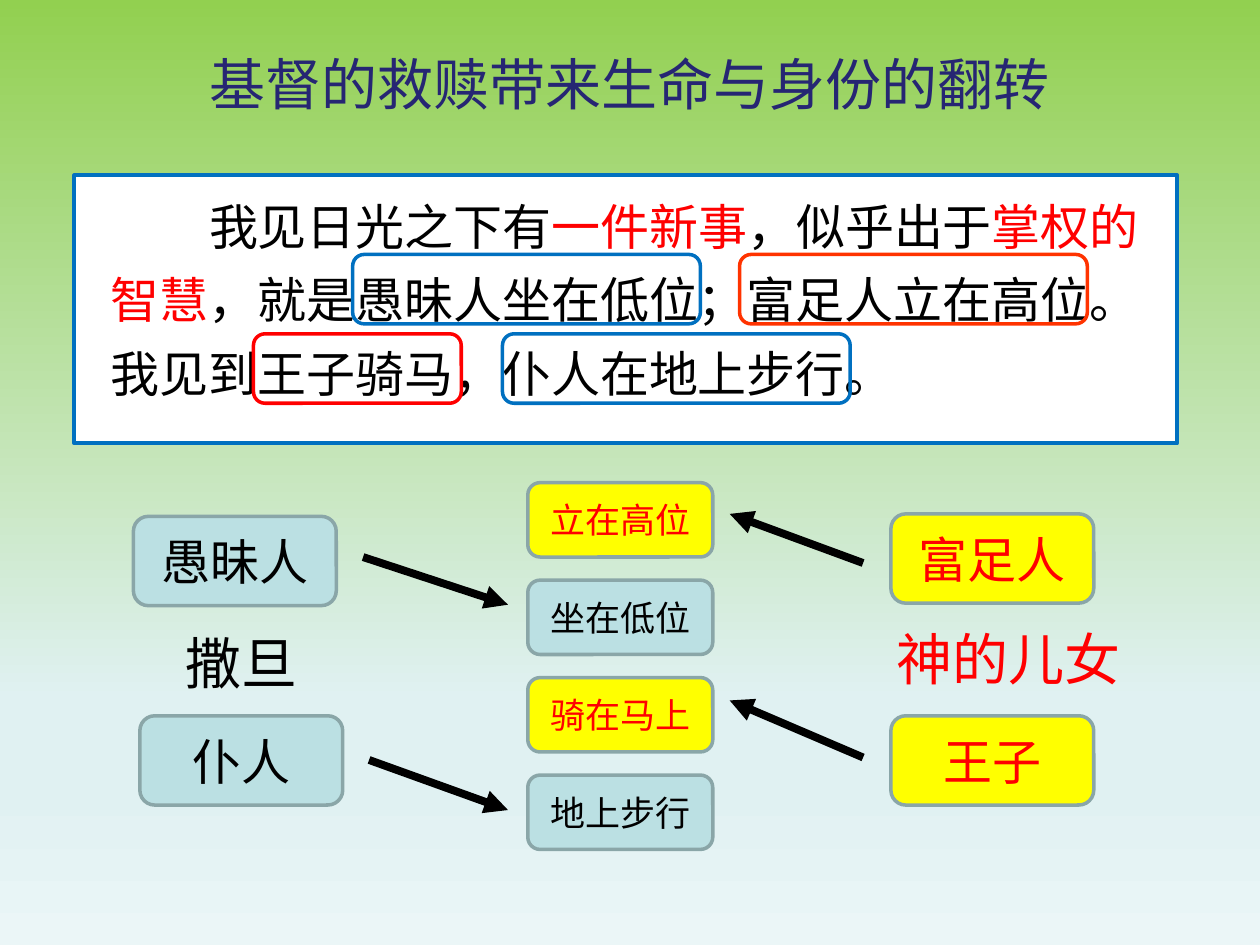
"""Build a slide on the reversal of life and status."""
from typing import NamedTuple

from lxml import etree
from pptx import Presentation
from pptx import util as u
from pptx.dml.color import RGBColor
from pptx.enum import shapes, text
from pptx.oxml.ns import qn

COLORS = {
    "black": "000000", "red": "FF0000", "orange": "FF3300", "blue": "0070C0",
    "navy": "262673", "white": "FFFFFF", "yellow": "FFFF00",
    "aqua": "BBE0E3", "gray": "8AA6A8",
}
BACKGROUND = [(0, "92D050"), (74, "E0F1F2"), (83, "E0F1F2"), (100, "EBF6F7")]
SANS = "Noto Sans CJK SC"


class Box(NamedTuple):
    left: float
    top: float
    width: float
    height: float


class Card(NamedTuple):
    words: str
    box: Box
    size: int
    raised: bool


class Highlight(NamedTuple):
    box: Box
    color: str


class Label(NamedTuple):
    words: str
    box: Box
    color: str


class Arrow(NamedTuple):
    x1: float
    y1: float
    x2: float
    y2: float


VERSE = [
    ("我见日光之下有", "black"), ("一件新事", "red"), ("，似乎出于", "black"),
    ("掌权的智慧", "red"),
    ("，就是愚昧人坐在低位；富足人立在高位。我见到王子骑马，仆人在地上步行。", "black"),
]
HIGHLIGHTS = [
    Highlight(Box(7.11, 5.13, 7.01, 1.4), "blue"),
    Highlight(Box(14.91, 5.13, 7.01, 1.4), "orange"),
    Highlight(Box(5.11, 6.73, 4.19, 1.4), "red"),
    Highlight(Box(10.13, 6.73, 7.01, 1.4), "blue"),
]
PEOPLE = [
    Card(words, Box(left, top, 4.09, 1.8), 28, raised)
    for words, left, top, raised in [
        ("愚昧人", 2.69, 10.41, False), ("富足人", 17.96, 10.36, True),
        ("仆人", 2.82, 14.43, False), ("王子", 17.96, 14.43, True)]
]
POSITIONS = [
    Card(words, Box(10.64, 9.73 + row * 1.965, 3.73, 1.5), 20, row % 2 == 0)
    for row, words in enumerate(["立在高位", "坐在低位", "骑在马上", "地上步行"])
]
ARROWS = [
    Arrow(7.32, 11.23, 10.24, 12.19), Arrow(7.44, 15.32, 10.24, 16.33),
    Arrow(17.4, 11.35, 14.71, 10.36), Arrow(17.4, 15.27, 14.71, 14.12),
]
LABELS = [
    Label("撒旦", Box(2.82, 12.55, 4.09, 1.63), "black"),
    Label("神的儿女", Box(17.32, 12.47, 6.02, 1.63), "red"),
]


def rgb(name: str) -> RGBColor:
    return RGBColor.from_string(COLORS[name])


def lengths(values) -> list:
    return [u.Cm(value) for value in values]


def write(paragraph, words: str, *, size: int, color: str, font: str = SANS,
          align=text.PP_ALIGN.CENTER) -> None:
    paragraph.alignment = align
    run = paragraph.add_run()
    run.text = words
    run.font.size = u.Pt(size)
    run.font.color.rgb = rgb(color)
    run.font.name = font
    etree.SubElement(run.font._element, qn("a:ea"), typeface=font)


def outline(shape, color: str, width: float) -> None:
    shape.line.color.rgb = rgb(color)
    shape.line.width = u.Pt(width)


def place(shape, box: Box) -> None:
    shape.left, shape.top, shape.width, shape.height = lengths(box)


def paint_background(slide) -> None:
    fill = slide.background.fill
    fill.gradient()
    fill.gradient_angle = 270
    stops = next(slide._element.iter(qn("a:gsLst")))
    for stop in list(stops):
        stops.remove(stop)
    for percent, color in BACKGROUND:
        stop = etree.SubElement(stops, qn("a:gs"), pos=str(percent * 1000))
        etree.SubElement(stop, qn("a:srgbClr"), val=color)


def fill_title(title) -> None:
    place(title, Box(1.27, 0.43, 22.86, 2.51))
    title.text_frame.auto_size = text.MSO_AUTO_SIZE.NONE
    title.text_frame.vertical_anchor = text.MSO_ANCHOR.MIDDLE
    write(title.text_frame.paragraphs[0], "基督的救赎带来生命与身份的翻转",
          size=32, color="navy", font="Arial")


def fill_verse(body) -> None:
    place(body, Box(1.5, 3.53, 22.23, 5.41))
    body.fill.solid()
    body.fill.fore_color.rgb = rgb("white")
    outline(body, "blue", 2.25)
    body.text_frame.auto_size = text.MSO_AUTO_SIZE.NONE
    paragraph = body.text_frame.paragraphs[0]
    paragraph.line_spacing = u.Pt(42)
    paragraph.space_before = u.Pt(5.6)
    for words, color in VERSE:
        write(paragraph, words, size=28, color=color, align=text.PP_ALIGN.LEFT)
    properties = paragraph._p.get_or_add_pPr()
    properties.set("marL", str(u.Cm(0.48)))
    properties.set("indent", str(u.Cm(1.98)))
    etree.SubElement(properties, qn("a:buNone"))


def add_rounded(slide, box: Box, line: str):
    shape = slide.shapes.add_shape(
        shapes.MSO_SHAPE.ROUNDED_RECTANGLE, *lengths(box))
    shape.shadow.inherit = False
    shape.fill.background()
    outline(shape, line, 2)
    return shape


def add_card(slide, card: Card) -> None:
    shape = add_rounded(slide, card.box, "gray")
    shape.fill.solid()
    shape.fill.fore_color.rgb = rgb("yellow" if card.raised else "aqua")
    shape.text_frame.vertical_anchor = text.MSO_ANCHOR.MIDDLE
    write(shape.text_frame.paragraphs[0], card.words, size=card.size,
          color="red" if card.raised else "black")


def add_arrow(slide, arrow: Arrow) -> None:
    connector = slide.shapes.add_connector(
        shapes.MSO_CONNECTOR.STRAIGHT, *lengths(arrow))
    outline(connector, "black", 4.5)
    etree.SubElement(connector.line._get_or_add_ln(), qn("a:tailEnd"),
                     type="triangle")
    etree.SubElement(connector._element.spPr, qn("a:effectLst"))


def add_label(slide, label: Label) -> None:
    frame = slide.shapes.add_textbox(*lengths(label.box)).text_frame
    frame.word_wrap = True
    frame.auto_size = text.MSO_AUTO_SIZE.SHAPE_TO_FIT_TEXT
    write(frame.paragraphs[0], label.words, size=32, color=label.color,
          font="Noto Sans CJK JP")


def main() -> None:
    deck = Presentation()
    deck.slide_width, deck.slide_height = lengths((25.4, 19.05))
    slide = deck.slides.add_slide(deck.slide_layouts[1])
    paint_background(slide)
    fill_title(slide.shapes.title)
    fill_verse(slide.placeholders[1])
    for highlight in HIGHLIGHTS:
        add_rounded(slide, highlight.box, highlight.color)
    for card in PEOPLE + POSITIONS:
        add_card(slide, card)
    for arrow in ARROWS:
        add_arrow(slide, arrow)
    for label in LABELS:
        add_label(slide, label)
    deck.save("out.pptx")


if __name__ == "__main__":
    main()
